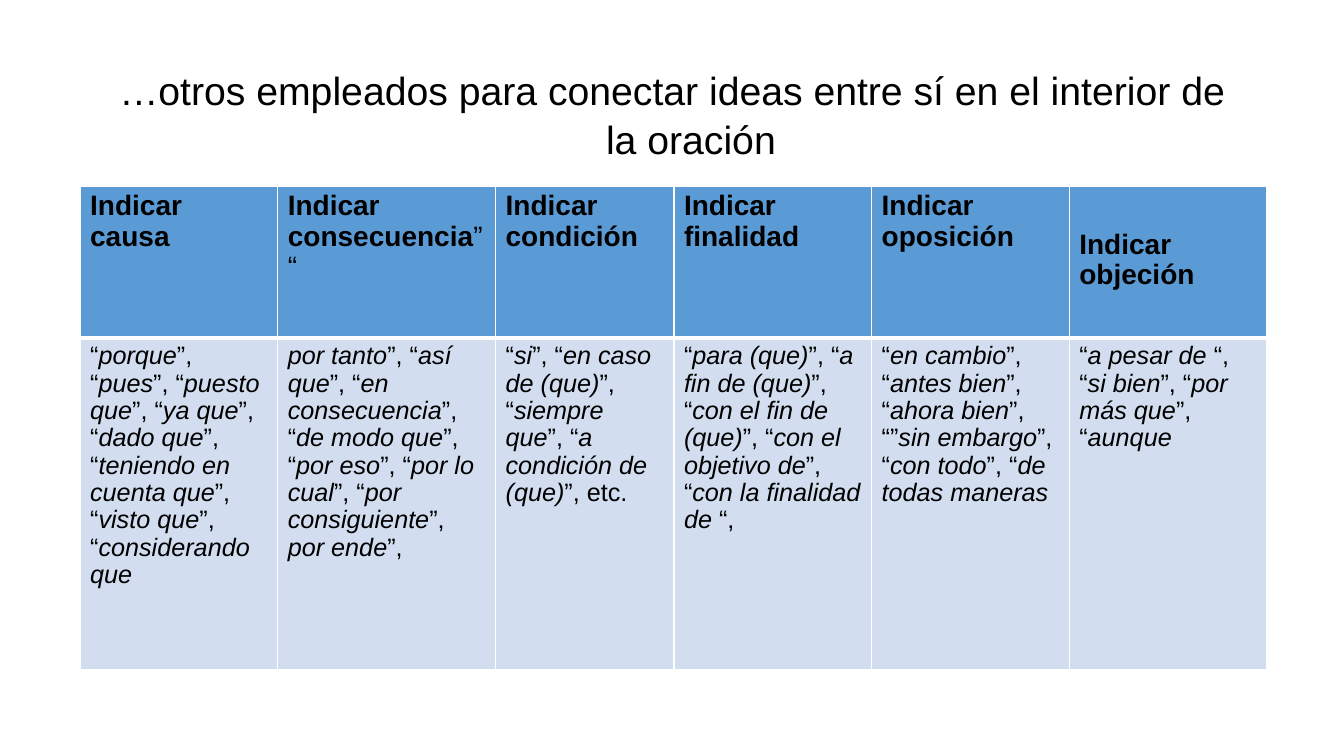
from lxml import etree
from pptx import Presentation
from pptx.dml.color import RGBColor
from pptx.enum.text import MSO_ANCHOR, MSO_AUTO_SIZE, PP_ALIGN
from pptx.oxml.ns import qn
from pptx.util import Pt

CENTER = PP_ALIGN.CENTER
LEFT = PP_ALIGN.LEFT
MIDDLE = MSO_ANCHOR.MIDDLE
TOP = MSO_ANCHOR.TOP
NO_AUTOFIT = MSO_AUTO_SIZE.NONE

BLACK = RGBColor(0x00, 0x00, 0x00)
WHITE = RGBColor(0xFF, 0xFF, 0xFF)
HEADER_BLUE = RGBColor(0x5B, 0x9B, 0xD5)
BODY_BLUE = RGBColor(0xD2, 0xDE, 0xEF)

# Asterisks switch the emphasis: regular weight in headings, italics in examples
CONNECTORS = [
    ("Indicar causa",
     "“*porque*”, “*pues*”, “*puesto que*”, “*ya que*”, “*dado que*”, "
     "“*teniendo en cuenta que*”, “*visto que*”, “*considerando que*"),
    ("Indicar consecuencia*” “",
     "*por tanto*”, “*así que*”, “*en consecuencia*”, “*de modo que*”, "
     "“*por eso*”, “*por lo cual*”, “*por consiguiente*”, *por ende*”,"),
    ("Indicar condición",
     "“*si*”, “*en caso de (que)*”, “*siempre que*”, "
     "“*a condición de (que)*”, etc."),
    ("Indicar finalidad",
     "“*para (que)*”, “*a fin de (que)*”, “*con el fin de (que)*”, "
     "“*con el objetivo de*”, “*con la finalidad de *“,"),
    ("Indicar oposición",
     "“*en cambio*”, “*antes bien*”, “*ahora bien*”, “”*sin embargo*”, "
     "“*con todo*”, “*de todas maneras*"),
    ("Indicar objeción",
     "“*a pesar de *“, “*si bien*”, “*por más que*”, “*aunque*"),
]
COLUMN_WIDTHS = [141.2, 155.6, 127.4, 141.2, 141.2, 141.2]
ROW_HEIGHTS = [108, 237]


def write_text(frame, text, size, align=LEFT, heading=False, spacing=1.0):
    para = frame.paragraphs[0]
    para.alignment = align
    para.line_spacing = spacing
    for index, piece in enumerate(text.split("*")):
        if piece:
            marked = index % 2 == 1
            span = para.add_run()
            span.text = piece
            span.font.name = "Arial"
            span.font.size = Pt(size)
            span.font.color.rgb = BLACK
            span.font.bold = heading and not marked
            span.font.italic = marked and not heading
    return para


def add_borders(cell, **widths):
    properties = cell._tc.get_or_add_tcPr()
    for side, width in widths.items():
        line = etree.SubElement(properties, qn(f"a:ln{side}"), w=str(Pt(width)))
        fill = etree.SubElement(line, qn("a:solidFill"))
        etree.SubElement(fill, qn("a:srgbClr"), val=str(WHITE))


deck = Presentation()
deck.slide_width = Pt(960)
deck.slide_height = Pt(540)
page = deck.slides.add_slide(deck.slide_layouts[5])

# Title with a hanging indent
title = page.shapes.title
title.left, title.top, title.width, title.height = Pt(66), Pt(29), Pt(828), Pt(104)
title.text_frame.auto_size = NO_AUTOFIT
title.text_frame.word_wrap = True
title.text_frame.vertical_anchor = MIDDLE
title_para = write_text(
    title.text_frame,
    "…otros empleados para conectar ideas entre sí en el interior de la oración",
    28, align=CENTER, spacing=1.04)
title_properties = title_para._p.get_or_add_pPr()
title_properties.set("marL", str(Pt(27)))
title_properties.set("indent", str(Pt(-27)))

# Table of connectors
table = page.shapes.add_table(
    len(ROW_HEIGHTS), len(CONNECTORS), Pt(57.2), Pt(133.2),
    Pt(sum(COLUMN_WIDTHS)), Pt(sum(ROW_HEIGHTS))).table
table.horz_banding = False
for row, height in zip(table.rows, ROW_HEIGHTS):
    row.height = Pt(height)

for index, (heading, examples) in enumerate(CONNECTORS):
    table.columns[index].width = Pt(COLUMN_WIDTHS[index])
    header_cell, body_cell = table.cell(0, index), table.cell(1, index)
    add_borders(header_cell, L=1, R=1, T=1, B=3)
    add_borders(body_cell, L=1, R=1, T=3, B=1)
    for cell, color in ((header_cell, HEADER_BLUE), (body_cell, BODY_BLUE)):
        cell.fill.solid()
        cell.fill.fore_color.rgb = color
        cell.vertical_anchor = TOP
    write_text(header_cell.text_frame, heading, 20, heading=True, spacing=0.97)
    write_text(body_cell.text_frame, examples, 18, spacing=0.97)

# The last heading sits one line lower
table.cell(0, len(CONNECTORS) - 1).margin_top = Pt(31)

deck.save("out.pptx")
